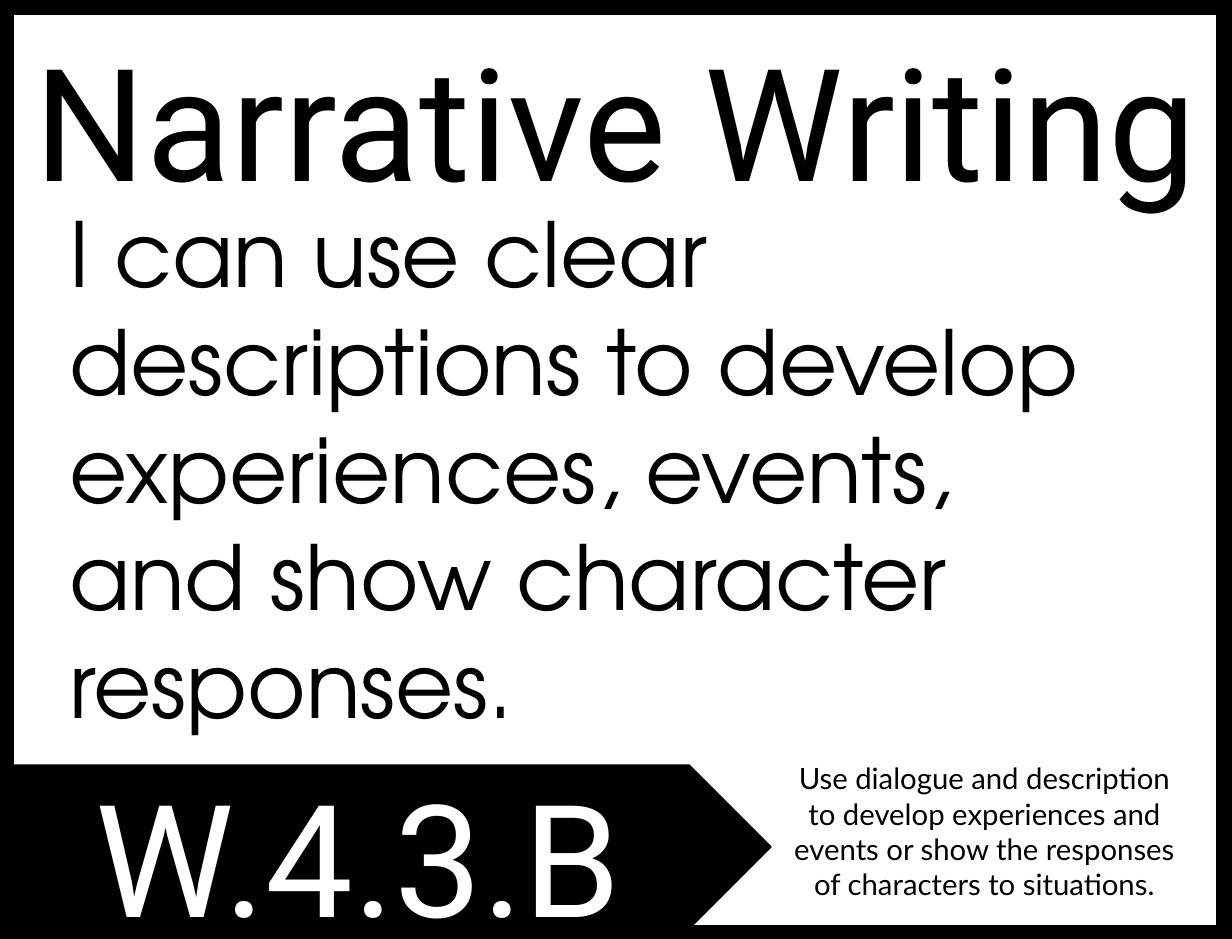
from pptx import Presentation
from pptx.dml.color import RGBColor
from pptx.enum.shapes import MSO_SHAPE
from pptx.enum.text import MSO_AUTO_SIZE, PP_ALIGN
from pptx.util import Inches, Pt

BLACK, WHITE = "000000", "FFFFFF"
HEAD, BODY, NOTE = "Roboto", "TeX Gyre Adventor", "Lato"


def paint(item, color):
    item.solid()
    item.fore_color.rgb = RGBColor.from_string(color)


class Poster:
    def __init__(self, slide):
        self.slide = slide
        paint(slide.background.fill, BLACK)

    def shape(self, kind, box, fill, width):
        form = self.slide.shapes.add_shape(kind, *map(Inches, box))
        form.shadow.inherit = False
        paint(form.fill, fill)
        paint(form.line.fill, BLACK)
        form.line.width = Pt(width)

    def text(self, words, box, font, size, color=BLACK, align=PP_ALIGN.CENTER):
        frame = self.slide.shapes.add_textbox(*map(Inches, box)).text_frame
        frame.word_wrap = True
        frame.auto_size = MSO_AUTO_SIZE.SHAPE_TO_FIT_TEXT
        para = frame.paragraphs[0]
        para.alignment = align
        run = para.add_run()
        run.text = words
        run.font.name = font
        run.font.size = Pt(size)
        paint(run.font.fill, color)


def main():
    deck = Presentation()
    deck.slide_width, deck.slide_height = Inches(10.5), Inches(8)
    poster = Poster(deck.slides.add_slide(deck.slide_layouts[6]))

    # Frame and banner
    poster.shape(MSO_SHAPE.RECTANGLE, (0.08, 0.09, 10.33, 7.83), WHITE, 6)
    poster.shape(MSO_SHAPE.PENTAGON, (0.08, 6.52, 6.49, 1.39), BLACK, 1)

    # Standard code and title
    poster.text("W.4.3.B", (0.49, 6.43, 5.13, 1.72), HEAD, 96, WHITE)
    poster.text("Narrative Writing", (0, 0.16, 10.5, 1.72), HEAD, 96)

    # Goal and full standard
    poster.text("I can use clear descriptions to develop experiences, events, "
                "and show character responses.",
                (0.49, 1.64, 9.29, 4.73), BODY, 55, align=PP_ALIGN.LEFT)
    poster.text("Use dialogue and description to develop experiences and "
                "events or show the responses of characters to situations.",
                (6.57, 6.43, 3.64, 1.31), NOTE, 18)

    deck.save("out.pptx")


if __name__ == "__main__":
    main()
